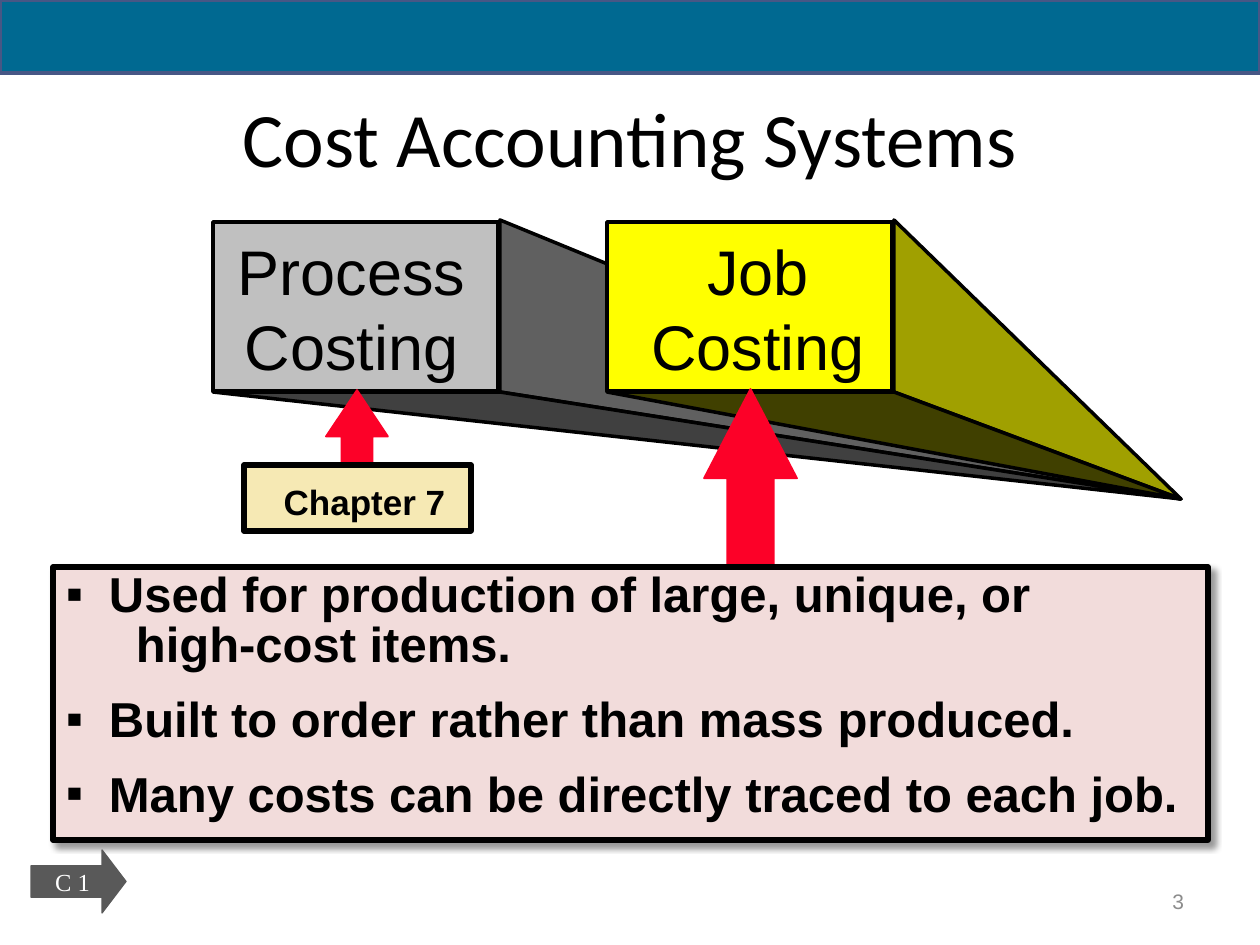
from lxml import etree
from pptx import Presentation
from pptx import util as u
from pptx.dml.color import RGBColor
from pptx.enum import shapes, text
from pptx.oxml import ns

EMU_PER_PX = 914400 / 126
BLACK, WHITE, RED = "000000", "FFFFFF", "FC0128"
KIND = shapes.MSO_SHAPE
ALIGN = text.PP_ALIGN
ANCHOR = text.MSO_ANCHOR


def px(value):
    return u.Emu(round(value * EMU_PER_PX))


def color(hex_code):
    return RGBColor.from_string(hex_code)


def add_node(parent, tag, **attributes):
    node = etree.SubElement(parent, ns.qn(tag))
    for name, value in attributes.items():
        node.set(name, str(value))
    return node


class Deck:
    """Holds the style and the current slide."""

    font = "Arial"
    insets = (13, 6, 13, 6)

    def __init__(self, width, height):
        self.file = Presentation()
        self.file.slide_width, self.file.slide_height = px(width), px(height)
        self.slide = self.file.slides.add_slide(self.file.slide_layouts[6])

    def paint(self, shape, fill, line, weight):
        shape.shadow.inherit = False
        shape.fill.solid()
        shape.fill.fore_color.rgb = color(fill)
        shape.line.color.rgb = color(line)
        shape.line.width = u.Pt(weight)
        return shape

    def shape(self, kind, box, fill, line=BLACK, weight=2, adjust=()):
        shape = self.slide.shapes.add_shape(kind, *map(px, box))
        for index, value in enumerate(adjust):
            shape.adjustments[index] = value
        return self.paint(shape, fill, line, weight)

    def polygon(self, points, fill):
        start, *rest = [(px(x), px(y)) for x, y in points]
        builder = self.slide.shapes.build_freeform(*start)
        builder.add_line_segments(rest, close=True)
        return self.paint(builder.convert_to_shape(), fill, BLACK, 2)

    def cube(self, left, front, side, floor):
        """A box front whose side and floor run to the vanishing point."""
        right, top, bottom, vanishing = left + 287, 220, 392, (1181, 499)
        self.shape(KIND.RECTANGLE, (left, top + 2, 285, 169), front)
        self.polygon([(right, top), vanishing, (right, bottom)], side)
        self.polygon([(left, bottom), (right, bottom), vanishing], floor)

    def frame(self, shape, anchor=ANCHOR.MIDDLE, insets=insets, wrap=True):
        frame = shape.text_frame
        frame.word_wrap = wrap
        frame.vertical_anchor = anchor
        (frame.margin_left, frame.margin_top,
         frame.margin_right, frame.margin_bottom) = map(px, insets)
        return frame

    def run(self, paragraph, words, size, ink=BLACK, bold=False, font=None):
        run = paragraph.add_run()
        run.text = words
        run.font.name = font or self.font
        run.font.size = u.Pt(size)
        run.font.bold = bold
        run.font.color.rgb = color(ink)

    def label(self, frame, lines, size, align=ALIGN.CENTER, **style):
        paragraph = frame.paragraphs[0]
        paragraph.alignment = align
        for index, words in enumerate(lines):
            if index:
                paragraph.add_line_break()
            self.run(paragraph, words, size, **style)

    def textbox(self, box, lines, size, **style):
        shape = self.slide.shapes.add_textbox(*map(px, box))
        self.label(self.frame(shape), lines, size, **style)

    def bullets(self, frame, items, size):
        """Each item is a list of lines; later lines are indented further."""
        rows = [(words, i, j) for i, item in enumerate(items)
                for j, words in enumerate(item)]
        for words, item_index, line_index in rows:
            first = item_index == line_index == 0
            paragraph = frame.paragraphs[0] if first else frame.add_paragraph()
            paragraph.alignment = ALIGN.LEFT
            paragraph.line_spacing = 0.85
            starts_later_item = item_index > 0 and line_index == 0
            paragraph.space_before = u.Pt(size / 2 if starts_later_item else 0)
            properties = paragraph._p.get_or_add_pPr()
            if line_index:
                properties.set("marL", str(px(70)))
                properties.set("indent", "0")
                add_node(properties, "a:buNone")
            else:
                properties.set("marL", str(px(43)))
                properties.set("indent", str(-px(43)))
                add_node(properties, "a:buFont", typeface=self.font)
                add_node(properties, "a:buChar", char="▪")
            self.run(paragraph, words, size, bold=True)

    def drop_shadow(self, shape):
        effects = shape._element.spPr.find(ns.qn("a:effectLst"))
        shadow = add_node(effects, "a:outerShdw", blurRad=u.Pt(4),
                          dist=u.Pt(3), dir=45 * 60000, algn="tl",
                          rotWithShape=0)
        tint = add_node(shadow, "a:srgbClr", val=BLACK)
        add_node(tint, "a:alpha", val=40000)


def main():
    deck = Deck(1260, 945)

    # Costing systems as cubes
    deck.cube(213, "C0C0C0", "606060", "404040")
    deck.cube(607, "FFFF00", "A0A000", "404000")
    deck.textbox((209, 226, 285, 164), ["Process", "Costing"], 36)
    deck.textbox((600, 226, 316, 164), ["Job", "Costing"], 36)

    # Arrows up to the cubes
    deck.shape(KIND.UP_ARROW, (704, 389, 93, 178), RED, RED, 1, (0.5, 0.96))
    deck.shape(KIND.UP_ARROW, (326, 390, 62, 93), RED, RED, 1, (0.5, 0.75))

    # Features of job costing
    features = deck.shape(KIND.RECTANGLE, (53, 567, 1155, 273), "F2DCDB",
                          weight=3)
    deck.drop_shadow(features)
    deck.bullets(deck.frame(features, ANCHOR.TOP), [
        ["Used for production of large, unique, or", "high-cost items."],
        ["Built to order rather than mass produced."],
        ["Many costs can be directly traced to each job."],
    ], 28)

    # Title
    deck.textbox((63, 84, 1134, 105), ["Cost Accounting Systems"], 44,
                 font="Calibri")

    # Chapter reference
    chapter = deck.shape(KIND.RECTANGLE, (244, 465, 227, 66), "F6E9B4",
                         weight=3)
    deck.label(deck.frame(chapter, insets=(27, 14, 13, 6)), ["Chapter 7"], 20,
               bold=True)

    # Learning objective tag
    objective = deck.shape(KIND.RIGHT_ARROW, (31, 850, 95, 63), "595959",
                           "595959", 0.75, (0.5, 0.38))
    deck.label(deck.frame(objective, wrap=False), ["C 1"], 14, ink=WHITE,
               font="Times New Roman")

    # Top bar and slide number
    deck.shape(KIND.RECTANGLE, (0, 0, 1260, 73), "006991", "475785", 2.25)
    deck.textbox((903, 876, 294, 50), ["3"], 12, align=ALIGN.RIGHT,
                 ink="8C8C8C")

    deck.file.save("out.pptx")


if __name__ == "__main__":
    main()
